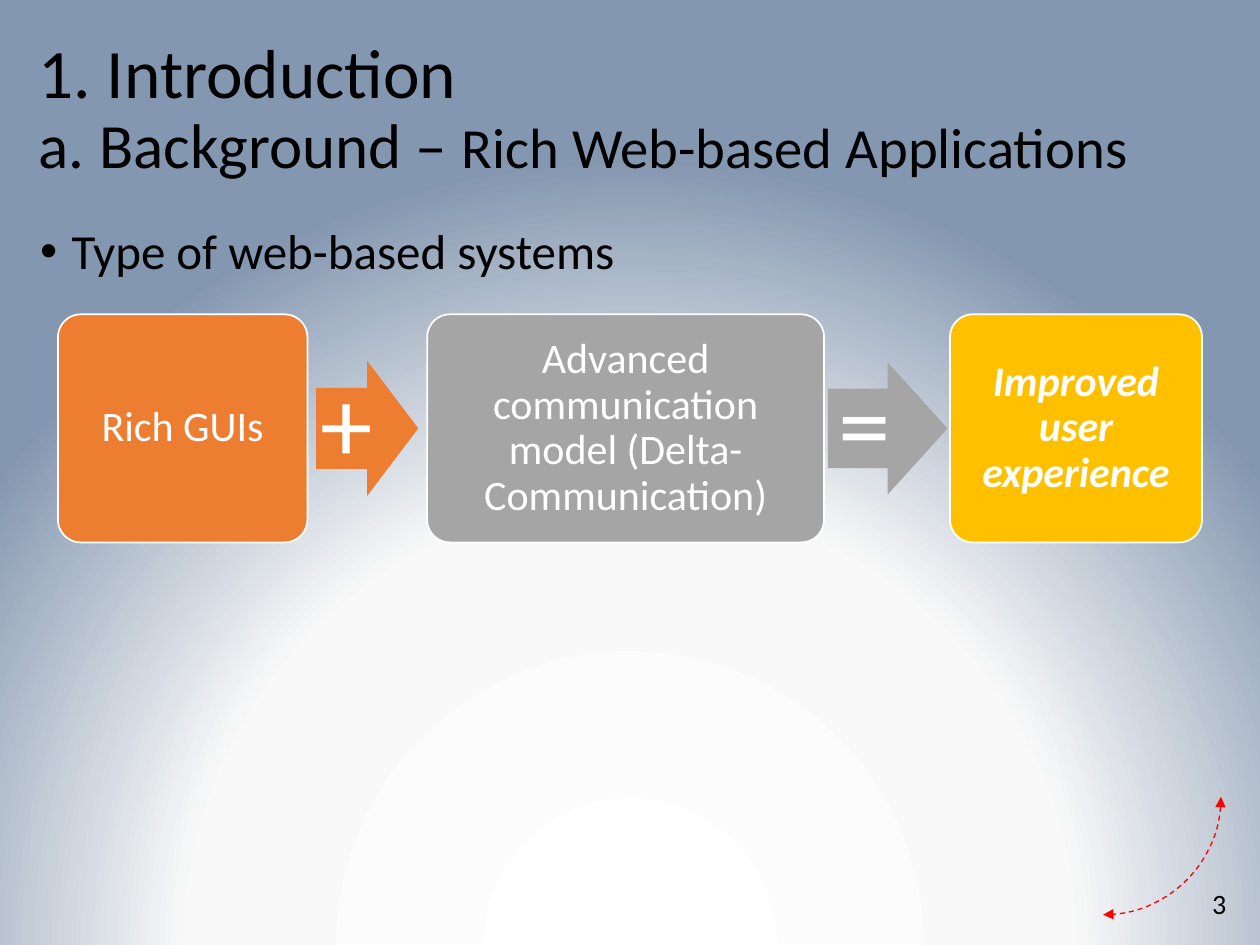
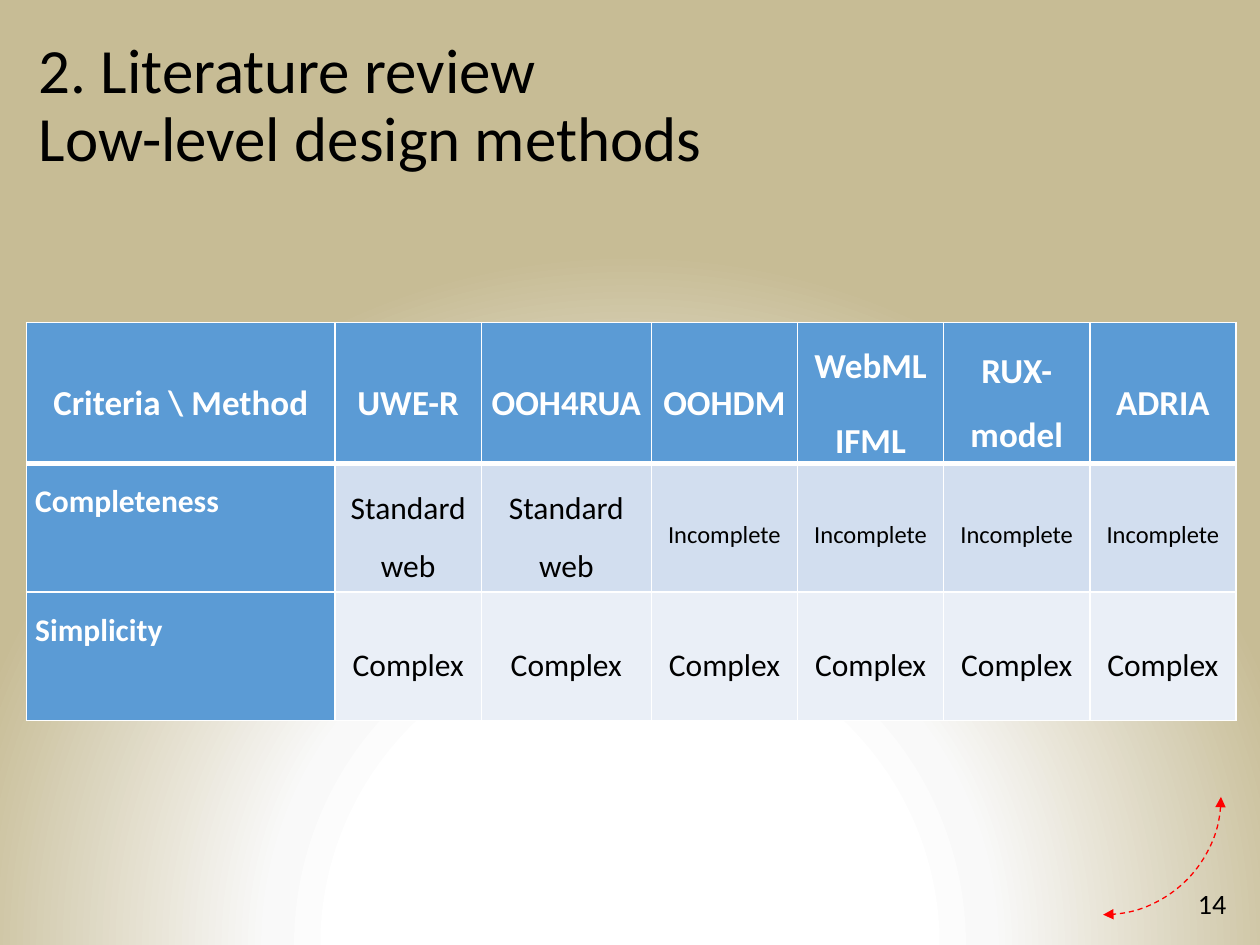
"""Build two slides on rich web applications and low-level design methods."""
from lxml import etree
from pptx import Presentation
from pptx.dml.color import RGBColor
from pptx.enum.dml import MSO_LINE
from pptx.enum.shapes import MSO_SHAPE
from pptx.enum.text import MSO_ANCHOR, PP_ALIGN
from pptx.oxml.ns import qn
from pptx.util import Inches, Pt

ROUNDED, ARROW, ARC = MSO_SHAPE.ROUNDED_RECTANGLE, MSO_SHAPE.RIGHT_ARROW, MSO_SHAPE.ARC
LEFT, CENTER, RIGHT = PP_ALIGN.LEFT, PP_ALIGN.CENTER, PP_ALIGN.RIGHT
TOP, MIDDLE = MSO_ANCHOR.TOP, MSO_ANCHOR.MIDDLE
DASH = MSO_LINE.DASH

FONT = "Calibri"
BLACK, WHITE, RED = "000000", "FFFFFF", "FF0000"
ORANGE, GRAY, GOLD = "ED7D31", "A5A5A5", "FFC000"
HEADER, BANDS = "5B9BD5", ("D2DEEF", "EAEFF7")
TEXT_INSETS = (0.1, 0.05, 0.1, 0.05)

INTRODUCTION = {
    "number": "3",
    "background": [(0, WHITE), (56, "F9F9F9"), (100, "8497B0")],
    "title": [
        [("1. Introduction", 39.6)],
        [("a. Background – ", 36), ("Rich Web-based Applications", 32.4)],
    ],
    "title_width": 10.04,
}
REVIEW = {
    "number": "14",
    "background": [(36, WHITE), (46, "F9F9F9"), (88, "C7BC95")],
    "title": [[("2. Literature review", 36)], [("Low-level design methods", 36)]],
    "title_width": 9.59,
}

BULLET = "Type of web-based systems"
STEPS_MIDDLE, STEP_HEIGHT = 3.4, 1.81
STEPS = [
    ("Rich GUIs", 0.46, 1.98, ORANGE, False),
    ("Advanced communication model (Delta-Communication)", 3.39, 3.15, GRAY, False),
    ("Improved user experience", 7.54, 2, GOLD, True),
]
OPERATORS = [("+", 2.51, 0.81, 1.07, ORANGE), ("=", 6.57, 0.95, 1.05, GRAY)]

METHODS = ["Criteria \\ Method", "UWE-R", "OOH4RUA", "OOHDM", "WebML\nIFML",
           "RUX-model", "ADRIA"]
RATINGS = [
    ["Completeness"] + ["Standard web"] * 2 + ["Incomplete"] * 4,
    ["Simplicity"] + ["Complex"] * 6,
]
COLUMN_WIDTHS = [2.45, 1.16, 1.35] + [1.16] * 4
ROW_HEIGHTS = [1.12, 1.02, 1.02]


def color(value):
    return RGBColor.from_string(value)


def add_xml(parent, tag, **attributes):
    return etree.SubElement(parent, qn(tag), attributes)


def style_text(frame, size, ink, align, spacing=0.9, after=0, bold=False, italic=False):
    for para in frame.paragraphs:
        para.alignment, para.line_spacing = align, spacing
        para.space_before, para.space_after = Pt(0), Pt(after)
        for span in para.runs:
            font = span.font
            font.name, font.bold, font.italic = FONT, bold, italic
            font.color.rgb = color(ink)
            if size:
                font.size = Pt(size)


def set_frame(frame, anchor, insets):
    frame.word_wrap, frame.vertical_anchor = True, anchor
    (frame.margin_left, frame.margin_top,
     frame.margin_right, frame.margin_bottom) = map(Inches, insets)


def add_text_box(page, left, top, width, height, anchor=TOP):
    box = page.shapes.add_textbox(*map(Inches, (left, top, width, height)))
    set_frame(box.text_frame, anchor, TEXT_INSETS)
    return box.text_frame


def add_shape(page, kind, left, top, width, height, fill=None):
    shape = page.shapes.add_shape(kind, *map(Inches, (left, top, width, height)))
    shape.shadow.inherit = False
    if fill:
        shape.fill.solid()
        shape.fill.fore_color.rgb = color(fill)
    else:
        shape.fill.background()
    shape.line.fill.background()
    return shape


def set_line(line, ink, width):
    line.fill.solid()
    line.color.rgb = color(ink)
    line.width = Pt(width)


def set_background(page, stops):
    page.background.fill.gradient()
    gradient = page.element.find(".//" + qn("a:gradFill"))
    for child in list(gradient):
        gradient.remove(child)
    stop_list = add_xml(gradient, "a:gsLst")
    for position, value in stops:
        stop = add_xml(stop_list, "a:gs", pos=str(position * 1000))
        add_xml(stop, "a:srgbClr", val=value)
    glow = add_xml(gradient, "a:path", path="circle")
    add_xml(glow, "a:fillToRect", l="50000", t="130000", r="50000", b="-30000")


def add_page(deck, content):
    page = deck.slides.add_slide(deck.slide_layouts[6])
    set_background(page, content["background"])

    arc = add_shape(page, ARC, 7.82, 5.39, 1.87, 1.87)
    arc.rotation = 90
    set_line(arc.line, RED, 0.75)
    arc.line.dash_style = DASH
    outline = arc.element.spPr.find(qn("a:ln"))
    for end in ("a:headEnd", "a:tailEnd"):
        add_xml(outline, end, type="triangle")

    title = add_text_box(page, 0.21, 0.26, content["title_width"], 1.45)
    for index, spans in enumerate(content["title"]):
        para = title.add_paragraph() if index else title.paragraphs[0]
        for text, size in spans:
            span = para.add_run()
            span.text, span.font.size = text, Pt(size)
    style_text(title, None, BLACK, LEFT)

    number = add_text_box(page, 7.58, 6.97, 2.25, 0.4, MIDDLE)
    number.text = content["number"]
    style_text(number, 16, BLACK, RIGHT, spacing=1.0)
    return page


def add_bullet(page):
    frame = add_text_box(page, 0.22, 1.75, 9.61, 5.07)
    frame.text = BULLET
    style_text(frame, 28, BLACK, LEFT)
    para = frame.paragraphs[0]
    para.space_before = Pt(10)
    properties = para._p.get_or_add_pPr()
    properties.set("marL", str(Inches(0.25)))
    properties.set("indent", str(-Inches(0.25)))
    add_xml(properties, "a:buFont", typeface="Arial")
    add_xml(properties, "a:buChar", char="•")


def add_equation(page):
    for text, left, width, fill, strong in STEPS:
        step = add_shape(page, ROUNDED, left, STEPS_MIDDLE - STEP_HEIGHT / 2,
                         width, STEP_HEIGHT, fill)
        step.adjustments[0] = 0.1
        set_line(step.line, WHITE, 1)
        set_frame(step.text_frame, MIDDLE, (0.1, 0.1, 0.1, 0.1))
        step.text_frame.text = text
        style_text(step.text_frame, 24, WHITE, CENTER, bold=strong, italic=strong)
    for sign, left, width, height, fill in OPERATORS:
        arrow = add_shape(page, ARROW, left, STEPS_MIDDLE - height / 2, width, height, fill)
        arrow.adjustments[0] = 0.6
        set_frame(arrow.text_frame, MIDDLE, (0, 0, 0.08, 0))
        arrow.text_frame.text = sign
        style_text(arrow.text_frame, 60, WHITE, CENTER)


def set_borders(cell, widths):
    properties = cell._tc.get_or_add_tcPr()
    for index, (side, width) in enumerate(widths.items()):
        border = add_xml(properties, "a:ln" + side, w=str(Pt(width)))
        add_xml(add_xml(border, "a:solidFill"), "a:srgbClr", val=WHITE)
        properties.insert(index, border)


def add_ratings_table(page):
    rows = [METHODS] + RATINGS
    table = page.shapes.add_table(
        len(rows), len(METHODS), Inches(0.21), Inches(2.56),
        Inches(sum(COLUMN_WIDTHS)), Inches(sum(ROW_HEIGHTS))).table
    for column, width in zip(table.columns, COLUMN_WIDTHS):
        column.width = Inches(width)
    for row, height in zip(table.rows, ROW_HEIGHTS):
        row.height = Inches(height)
    for r, texts in enumerate(rows):
        for c, text in enumerate(texts):
            cell = table.cell(r, c)
            heading, criterion = r == 0, r > 0 and c == 0
            strong = heading or criterion
            size = 20 if heading else 14 if text == "Incomplete" else 18
            cell.text_frame.text = text
            style_text(cell.text_frame, size, WHITE if strong else BLACK,
                       LEFT if criterion else CENTER, 1.5, 6, strong)
            cell.vertical_anchor = TOP if criterion else MIDDLE
            cell.margin_left = cell.margin_right = Inches(0.07)
            cell.margin_top = cell.margin_bottom = 0
            cell.fill.solid()
            cell.fill.fore_color.rgb = color(HEADER if strong else BANDS[r - 1])
            set_borders(cell, {"L": 1, "R": 1, "T": 3 if r == 1 else 1,
                               "B": 3 if heading else 1})


def main():
    deck = Presentation()
    deck.slide_width, deck.slide_height = Inches(10), Inches(7.5)
    introduction = add_page(deck, INTRODUCTION)
    add_bullet(introduction)
    add_equation(introduction)
    add_ratings_table(add_page(deck, REVIEW))
    deck.save("out.pptx")


if __name__ == "__main__":
    main()
